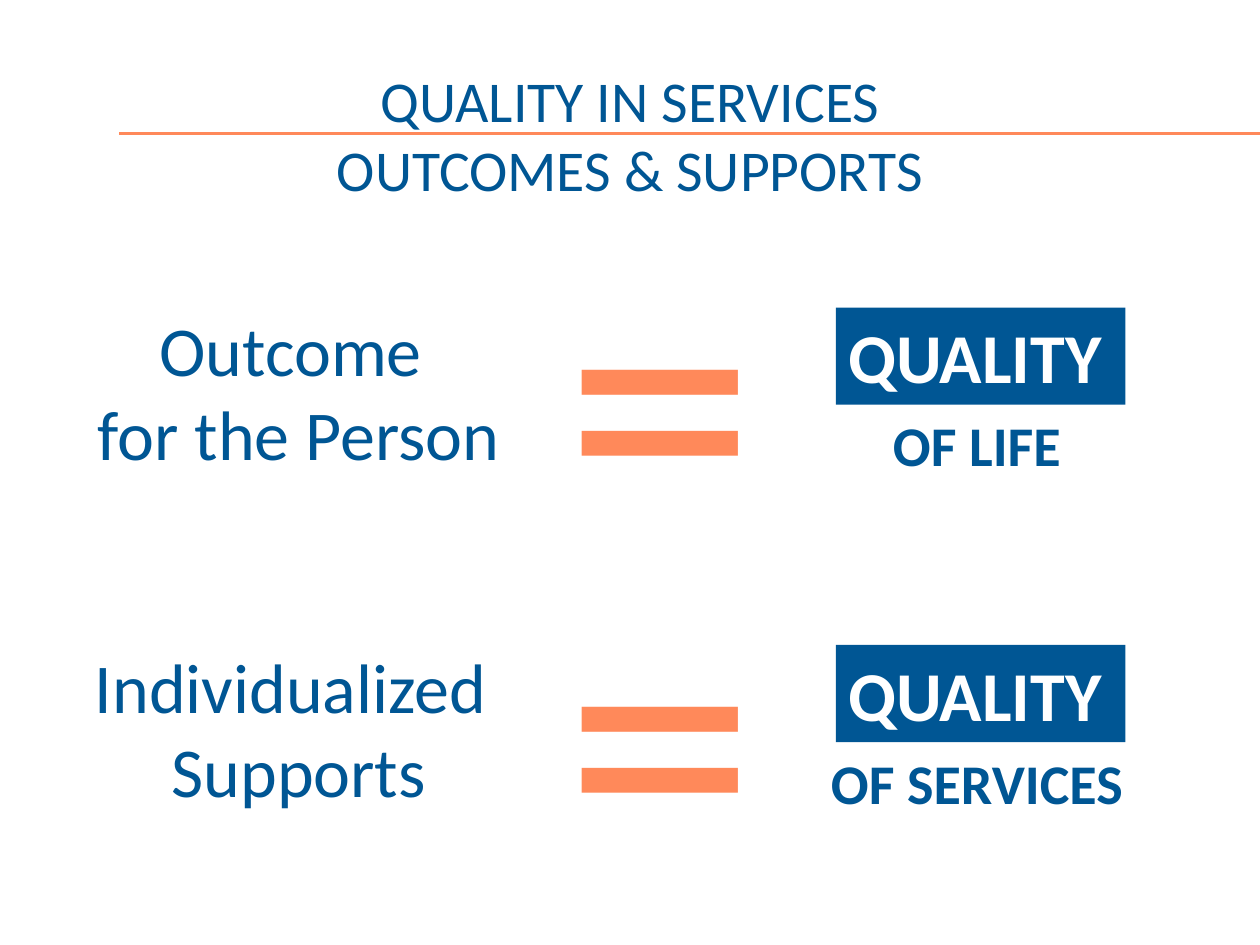
from pptx import Presentation
from pptx.dml.color import RGBColor
from pptx.enum.shapes import MSO_CONNECTOR, MSO_SHAPE
from pptx.enum.text import MSO_ANCHOR, MSO_AUTO_SIZE, PP_ALIGN
from pptx.oxml.ns import qn
from pptx.util import Cm, Pt
from lxml.etree import SubElement

# Content
TITLE = "QUALITY IN SERVICES\nOUTCOMES & SUPPORTS"
ROWS = [
    ("Outcome \nfor the Person", "OF LIFE"),
    ("Individualized \nSupports", "OF SERVICES"),
]
BADGE = "QUALITY"

# Style and layout (cm)
FONT, BLUE, ORANGE, WHITE = "Calibri", "005694", "FF895A", "FFFFFF"
ROW_PITCH = 6.8
LEFT, CENTER = PP_ALIGN.LEFT, PP_ALIGN.CENTER


def rgb(value):
    return RGBColor.from_string(value)


def write(sp, text, size, color, align=CENTER, bold=False, anchor=MSO_ANCHOR.TOP):
    tf = sp.text_frame
    tf.text = text
    tf.word_wrap = True
    tf.auto_size = MSO_AUTO_SIZE.NONE
    tf.vertical_anchor = anchor
    for p in tf.paragraphs:
        p.alignment = align
        for r in p.runs:
            r.font.name, r.font.size, r.font.bold = FONT, Pt(size), bold
            r.font.color.rgb = rgb(color)


def add_text(s, box, *args, **style):
    write(s.shapes.add_textbox(*map(Cm, box)), *args, **style)


def add_badge(s, box):
    sp = s.shapes.add_shape(MSO_SHAPE.RECTANGLE, *map(Cm, box))
    sp.shadow.inherit = False
    sp.fill.solid()
    sp.fill.fore_color.rgb = rgb(BLUE)
    sp.line.fill.background()
    write(sp, BADGE, 40, WHITE, LEFT, bold=True)


def main():
    prs = Presentation()
    prs.slide_width, prs.slide_height = Cm(25.4), Cm(19.05)
    s = prs.slides.add_slide(prs.slide_layouts[5])

    # Title
    title = s.shapes.title
    title.left, title.top, title.width, title.height = map(Cm, (6.48, 1.17, 12.45, 3.07))
    write(title, TITLE, 33, BLUE)

    # Equations: cause = quality
    for i, (cause, result) in enumerate(ROWS):
        dy = i * ROW_PITCH
        add_text(s, (1.5, 6.05 + dy, 9.04, 3.7), cause, 40, BLUE)
        add_text(s, (11.13, 2.9 + dy, 4.6, 9.65), "=", 220, ORANGE, LEFT)
        add_badge(s, (16.85, 6.2 + dy, 5.84, 1.96))
        add_text(s, (16.15, 8.16 + dy, 7.09, 1.63), result, 32, BLUE, bold=True)

    # Rule through the title
    rule = s.shapes.add_connector(
        MSO_CONNECTOR.STRAIGHT, Cm(2.4), Cm(2.69), prs.slide_width, Cm(2.69))
    rule.line.color.rgb = rgb(ORANGE)
    rule.line.width = Pt(1.75)
    SubElement(rule._element.spPr, qn("a:effectLst"))

    prs.save("out.pptx")


if __name__ == "__main__":
    main()
